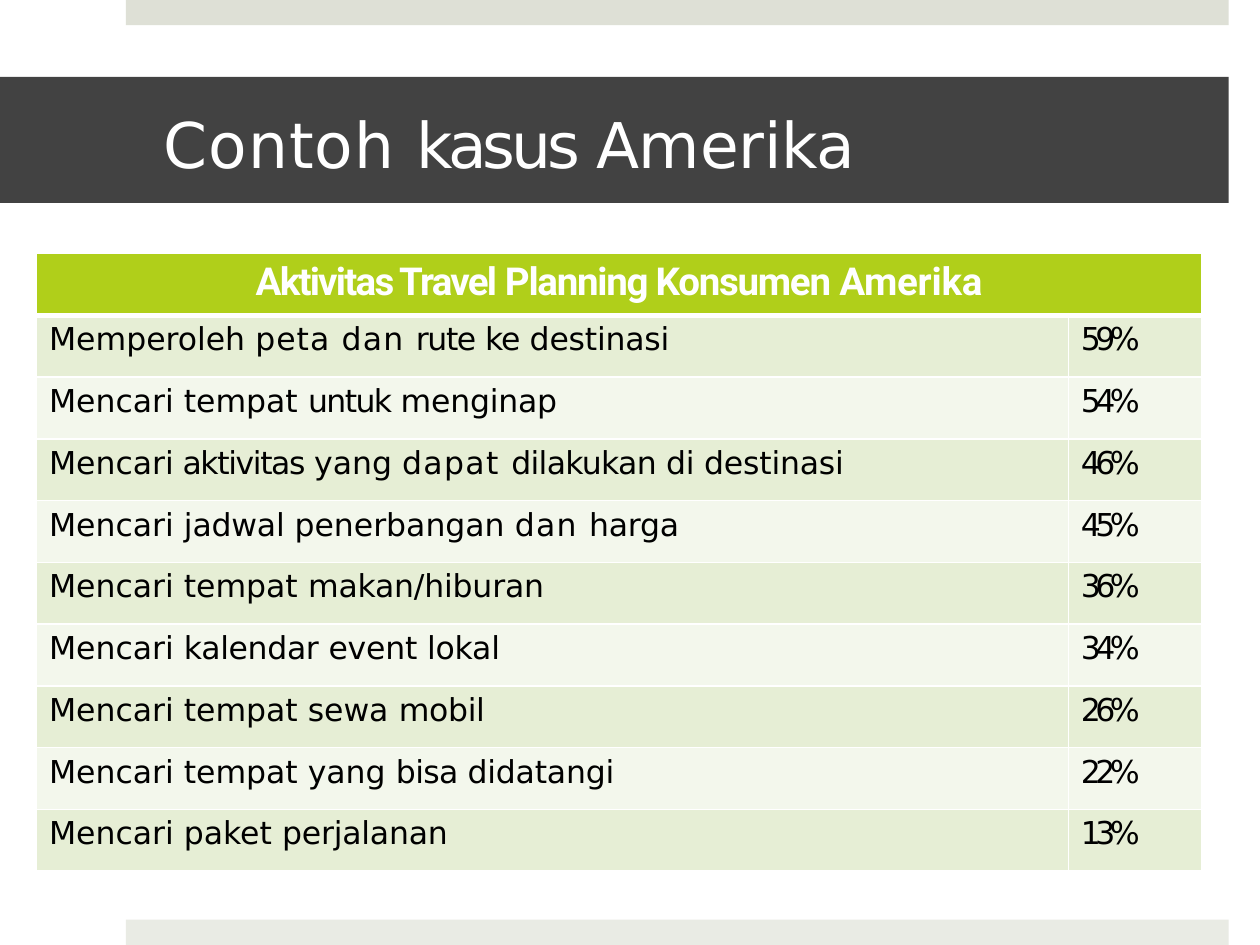
"""Build the slide on travel planning by American consumers."""
from lxml import etree
from pptx import Presentation, util as u
from pptx.dml.color import RGBColor
from pptx.enum import shapes, text
from pptx.oxml.ns import qn

HUES = {"top": "DEE0D6", "base": "E9EBE4", "band": "424242", "head": "B0CF1A",
        "odd": "E6EED5", "even": "F3F7EC", "white": "FFFFFF", "black": "000000"}
SANS, ROBOTO = "DejaVu Sans", "Roboto"
TITLE = [("Contoh ", 0.6), ("kasus ", -2.3), ("Amerika", -0.1)]
HEAD = [("Aktivitas Travel ", -1), ("Planning Konsumen ", -0.7), ("Amerika", -0.1)]
ROWS = [
    ([("Memperoleh ", 0), ("peta ", 0.6), ("dan ", 0.7), ("rute ", -0.8),
      ("ke ", -0.5), ("destinasi", -0.1)], "59%"),
    ([("Mencari tempat ", 0), ("untuk ", -0.9), ("menginap", -0.1)], "54%"),
    ([("Mencari", 0), (" aktivitas ", -0.8), ("yang ", 0), ("dapat ", 0.8),
      ("dilakukan ", -0.4), ("di ", -0.2), ("destinasi", -0.1)], "46%"),
    ([("Mencari ", 0), ("jadwal ", -0.1), ("penerbangan ", 0), ("dan ", 0.7),
      ("harga", -0.1)], "45%"),
    ([("Mencari tempat ", 0), ("makan/hiburan", -0.1)], "36%"),
    ([("Mencari ", 0), ("kalendar ", -0.2), ("event lokal", -0.1)], "34%"),
    ([("Mencari tempat sewa ", 0), ("mobil", -0.2)], "26%"),
    ([("Mencari tempat yang ", 0), ("bisa ", -0.4), ("didatangi", -0.1)], "22%"),
    ([("Mencari paket ", 0), ("perjalanan", -0.1)], "13%"),
]
BARS = [("top", 0), ("base", 18.54)]
COLS = [20.8, 2.68]


def tint(fill, hue):
    fill.solid()
    fill.fore_color.rgb = RGBColor.from_string(HUES[hue])


def write(para, parts, size, face, hue, bold=False, left=0, gap=3.6, align="LEFT"):
    para.alignment = getattr(text.PP_ALIGN, align)
    para.space_before = u.Pt(gap)
    para.line_spacing = 1.0
    props = para._p.get_or_add_pPr()
    props.set("marL", str(u.Cm(left)))
    props.set("indent", "0")
    for words, space in parts:
        run = para.add_run()
        run.text = words
        font = run.font
        font.size, font.name, font.bold = u.Pt(size), face, bold
        tint(font.fill, hue)
        run._r.get_or_add_rPr().set("spc", str(round(space * 100)))


def edge(cell, sides):
    props = cell._tc.get_or_add_tcPr()
    for spot, (side, width) in enumerate(sides.items()):
        line = etree.Element(qn(f"a:ln{side}"), w=str(u.Pt(width)))
        fill = etree.SubElement(line, qn("a:solidFill"))
        etree.SubElement(fill, qn("a:srgbClr"), val=HUES["white"])
        props.insert(spot, line)


def dress(cell, hue, row):
    cell.margin_left = cell.margin_right = cell.margin_bottom = 0
    cell.margin_top = u.Cm(0.13)
    tint(cell.fill, hue)
    edge(cell, {"L": 1, "R": 1, "T": 3 if row == 1 else 1, "B": 3 if row == 0 else 1})


def main():
    deck = Presentation()
    deck.slide_width, deck.slide_height = u.Cm(25.4), u.Cm(19.05)
    slide = deck.slides.add_slide(deck.slide_layouts[5])

    for hue, top in BARS:
        bar = slide.shapes.add_shape(shapes.MSO_SHAPE.RECTANGLE, u.Cm(2.54),
                                     u.Cm(top), u.Cm(22.23), u.Cm(0.51))
        bar.shadow.inherit = False
        tint(bar.fill, hue)
        bar.line.fill.background()

    title = slide.shapes.title
    title.left, title.top = 0, u.Cm(1.55)
    title.width, title.height = u.Cm(24.77), u.Cm(2.54)
    tint(title.fill, "band")
    frame = title.text_frame
    frame.margin_left = frame.margin_right = frame.margin_bottom = 0
    frame.margin_top = u.Cm(0.58)
    frame.vertical_anchor = text.MSO_ANCHOR.TOP
    frame.auto_size = text.MSO_AUTO_SIZE.NONE
    write(frame.paragraphs[0], TITLE, 36, SANS, "white", left=3.3, gap=14.4)

    grid = slide.shapes.add_table(len(ROWS) + 1, 2, u.Cm(0.74), u.Cm(5.11),
                                  u.Cm(sum(COLS)), u.Cm(12.45)).table
    for col, width in zip(grid.columns, COLS):
        col.width = u.Cm(width)
    grid.cell(0, 0).merge(grid.cell(0, 1))
    for cell in grid.rows[0].cells:
        dress(cell, "head", 0)
    write(grid.cell(0, 0).text_frame.paragraphs[0], HEAD, 22, ROBOTO, "white",
          bold=True, align="CENTER")
    for row, (task, share) in enumerate(ROWS, 1):
        for col, parts in enumerate([task, [(share, -3.2)]]):
            cell = grid.cell(row, col)
            dress(cell, "odd" if row % 2 else "even", row)
            write(cell.text_frame.paragraphs[0], parts, 18, SANS, "black", left=0.25)
    deck.save("out.pptx")


if __name__ == "__main__":
    main()
